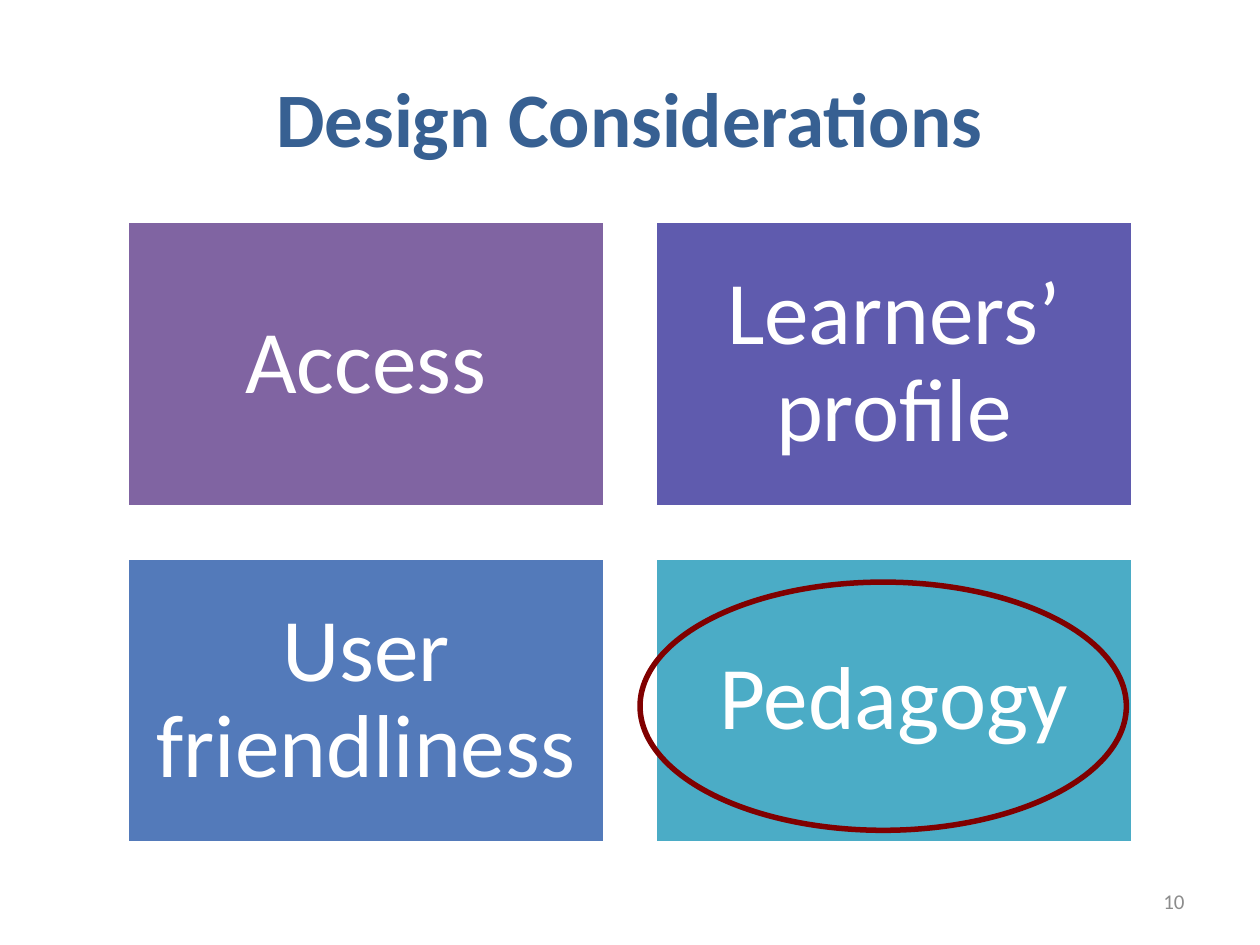
from pptx import Presentation
from pptx.dml.color import RGBColor
from pptx.enum.shapes import MSO_SHAPE as Shape
from pptx.enum.text import MSO_ANCHOR as Anchor, PP_ALIGN as Align
from pptx.util import Inches, Pt

FONT = "Calibri"
WHITE = RGBColor(0xFF, 0xFF, 0xFF)
TITLE_BLUE = RGBColor(0x37, 0x60, 0x92)
PURPLE = RGBColor(0x80, 0x64, 0xA2)
INDIGO = RGBColor(0x5F, 0x5B, 0xAE)
BLUE = RGBColor(0x53, 0x7A, 0xBA)
TEAL = RGBColor(0x4B, 0xAC, 0xC6)
MAROON = RGBColor(0x80, 0x00, 0x00)
GREY = RGBColor(0x8C, 0x8C, 0x8C)


def set_text(shape, text, size, color, align, bold=False):
    frame = shape.text_frame
    frame.text = text
    frame.word_wrap = True
    frame.vertical_anchor = Anchor.MIDDLE
    paragraph = frame.paragraphs[0]
    paragraph.alignment = align
    font = paragraph.runs[0].font
    font.name, font.size, font.bold = FONT, Pt(size), bold
    font.color.rgb = color


prs = Presentation()
prs.slide_width, prs.slide_height = Inches(10), Inches(7.5)
slide = prs.slides.add_slide(prs.slide_layouts[5])

title = slide.shapes.title
title.left, title.top = Inches(0.5), Inches(0.3)
title.width, title.height = Inches(9), Inches(1.25)
set_text(title, "Design Considerations", 44, TITLE_BLUE, Align.CENTER, bold=True)

# Two-by-two grid of considerations
TILE_WIDTH, TILE_HEIGHT = 3.81, 2.28
COLUMN_STEP, ROW_STEP = 4.19, 2.67
considerations = [
    ("Access", PURPLE),
    ("Learners’ profile", INDIGO),
    ("User friendliness", BLUE),
    ("Pedagogy", TEAL),
]
for index, (label, color) in enumerate(considerations):
    row, column = divmod(index, 2)
    tile = slide.shapes.add_shape(
        Shape.RECTANGLE,
        Inches(1 + column * COLUMN_STEP), Inches(1.75 + row * ROW_STEP),
        Inches(TILE_WIDTH), Inches(TILE_HEIGHT))
    tile.shadow.inherit = False
    tile.fill.solid()
    tile.fill.fore_color.rgb = color
    tile.line.color.rgb = WHITE
    tile.line.width = Pt(3.15)
    set_text(tile, label, 51, WHITE, Align.CENTER)
    frame = tile.text_frame
    frame.margin_left = frame.margin_right = Inches(0.21)
    frame.margin_top = frame.margin_bottom = Inches(0.21)
    frame.paragraphs[0].line_spacing = 0.9

pedagogy_ring = slide.shapes.add_shape(
    Shape.OVAL, Inches(5.08), Inches(4.62), Inches(3.86), Inches(1.97))
pedagogy_ring.shadow.inherit = False
pedagogy_ring.fill.background()
pedagogy_ring.line.color.rgb = MAROON
pedagogy_ring.line.width = Pt(3.15)

page_number = slide.shapes.add_textbox(
    Inches(7.17), Inches(6.95), Inches(2.33), Inches(0.4))
set_text(page_number, "10", 12, GREY, Align.RIGHT)

prs.save("out.pptx")
